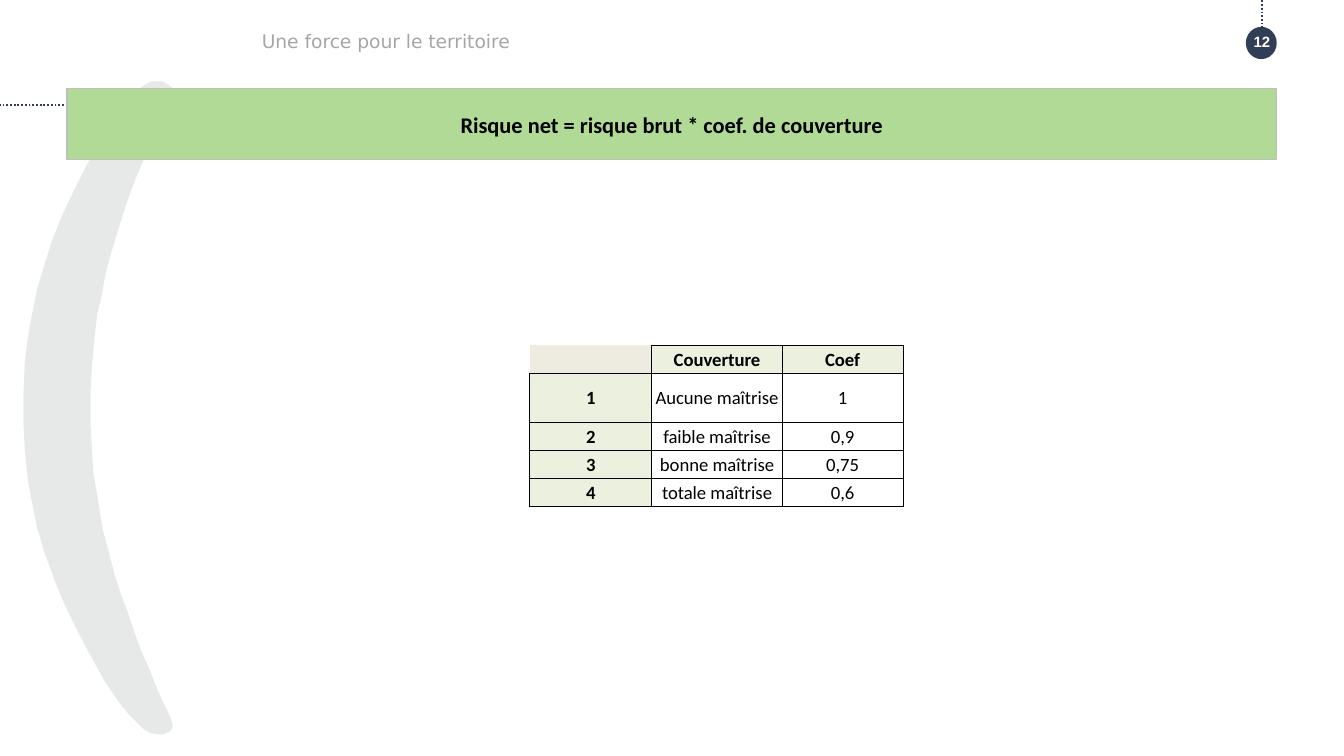
from lxml import etree
from pptx import Presentation
from pptx import util as u
from pptx.dml.color import RGBColor
from pptx.enum import dml, shapes, text
from pptx.oxml.ns import qn

prs = Presentation()
prs.slide_width = u.Inches(10)
prs.slide_height = prs.slide_width * 9 // 16
s = prs.slides.add_slide(prs.slide_layouts[6])
unit = prs.slide_width // 1000
rgb = RGBColor.from_string


def write(tf, words, size, font, color, bold, align):
    tf.text = words
    tf.word_wrap = True
    tf.vertical_anchor = text.MSO_ANCHOR.MIDDLE
    p = tf.paragraphs[0]
    p.alignment = align
    for r in p.runs:
        r.font.size, r.font.name, r.font.bold = u.Pt(size), font, bold
        r.font.color.rgb = rgb(color)


def paint(sp, fill, line=None):
    sp.shadow.inherit = False
    sp.fill.solid()
    sp.fill.fore_color.rgb = rgb(fill)
    if line:
        sp.line.color.rgb = rgb(line)
        sp.line.width = u.Pt(0.75)
    else:
        sp.line.fill.background()


LEFT, CENTER = text.PP_ALIGN.LEFT, text.PP_ALIGN.CENTER

outer = [(128, 68), (128, 66), (127, 65), (121, 61), (115, 61), (113, 61), (107, 64),
         (101, 70), (94, 78), (88, 86), (81, 96), (75, 106), (64, 125), (56, 141),
         (47, 160), (39, 180), (34, 196), (28, 216), (24, 236), (21, 253), (19, 270),
         (18, 292), (18, 315), (19, 334), (21, 355), (24, 372), (28, 392), (34, 412),
         (41, 431), (47, 446), (56, 465), (67, 486), (78, 506), (84, 515), (91, 525),
         (97, 532), (103, 538), (107, 542), (112, 545), (118, 546), (121, 546),
         (126, 544), (128, 541)]
inner = [(128, 539), (126, 533), (122, 525), (117, 514), (111, 499), (104, 483),
         (99, 469), (94, 454), (89, 441), (85, 428), (81, 413), (76, 394), (72, 369),
         (69, 352), (68, 335), (67, 317), (67, 290), (68, 272), (70, 250), (72, 233),
         (75, 221), (78, 204), (82, 189), (88, 169), (93, 153), (100, 134), (108, 115),
         (114, 101), (120, 87), (125, 77), (127, 71)]
crescent = outer + inner
fb = s.shapes.build_freeform(*crescent[0], scale=unit)
fb.add_line_segments(crescent[1:], close=True)
paint(fb.convert_to_shape(), "E7E8E8", "E7E8E8")

badge = s.shapes.add_shape(shapes.MSO_SHAPE.OVAL, 927 * unit, 20 * unit, 23 * unit, 24 * unit)
paint(badge, "313E56")

for ends in [(939, 21, 939, 0), (64, 78, 0, 78)]:
    cx = s.shapes.add_connector(shapes.MSO_CONNECTOR.STRAIGHT, *[n * unit for n in ends])
    cx.line.color.rgb = rgb("313E56")
    cx.line.width = u.Pt(1)
    cx.line.dash_style = dml.MSO_LINE.ROUND_DOT
    etree.SubElement(cx._element.spPr, qn("a:effectLst"))

rows = [("", "Couverture", "Coef"),
        ("1", "Aucune maîtrise", "1"),
        ("2", "faible maîtrise", "0,9"),
        ("3", "bonne maîtrise", "0,75"),
        ("4", "totale maîtrise", "0,6")]
widths, heights = [91, 97, 90], [21, 36, 21, 21, 21]
tbl = s.shapes.add_table(5, 3, 394 * unit, 257 * unit, sum(widths) * unit, sum(heights) * unit).table
tbl.first_row = tbl.horz_banding = False
for col, w in zip(tbl.columns, widths):
    col.width = w * unit
for row, h in zip(tbl.rows, heights):
    row.height = h * unit

for i, row in enumerate(rows):
    for j, words in enumerate(row):
        cell = tbl.cell(i, j)
        corner = i == j == 0
        head = i == 0 or j == 0
        write(cell.text_frame, words, 10, "Calibri", "000000", head, CENTER)
        cell.vertical_anchor = text.MSO_ANCHOR.MIDDLE
        cell.margin_left = cell.margin_right = cell.margin_top = unit
        cell.margin_bottom = 0
        if head:
            cell.fill.solid()
            cell.fill.fore_color.rgb = rgb("EEECE1" if corner else "EBF1DE")
        else:
            cell.fill.background()
        if corner:
            end = etree.SubElement(cell.text_frame.paragraphs[0]._p, qn("a:endParaRPr"))
            end.set("sz", "1000")
        tcPr = cell._tc.get_or_add_tcPr()
        for k, side in enumerate(["lnL", "lnR", "lnT", "lnB"]):
            ln = etree.Element(qn("a:" + side), w=str(u.Pt(0.5)))
            if corner and side in ("lnL", "lnT"):
                etree.SubElement(ln, qn("a:noFill"))
            else:
                fill = etree.SubElement(ln, qn("a:solidFill"))
                etree.SubElement(fill, qn("a:srgbClr"), val="000000")
            tcPr.insert(k, ln)

for box, words, size, font, color, bold, align in [
        ((185, 14, 729, 33), "Une force pour le territoire", 10, "DejaVu Sans", "A6A6A6", False, LEFT),
        ((914, 25, 50, 12), "12", 8, "Arial", "FFFFFF", True, CENTER)]:
    tb = s.shapes.add_textbox(*[n * unit for n in box])
    write(tb.text_frame, words, size, font, color, bold, align)

title = s.shapes.add_shape(shapes.MSO_SHAPE.RECTANGLE, 50 * unit, 66 * unit, 900 * unit, 53 * unit)
paint(title, "B2DA97", "BDBDBD")
write(title.text_frame, "Risque net = risque brut * coef. de couverture", 12, "Calibri", "000000", True, CENTER)

prs.save("out.pptx")
